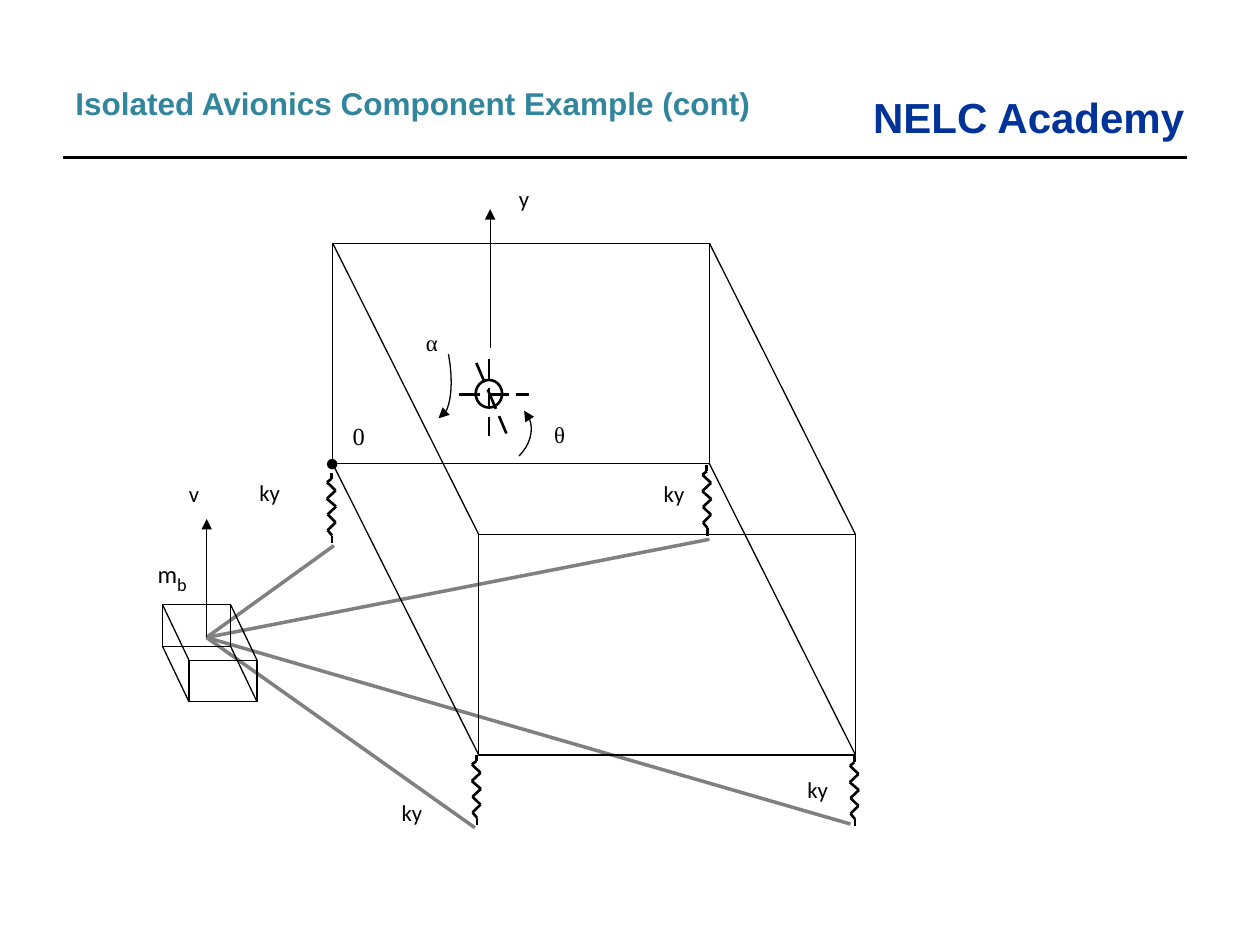
"""Draw a boxed component on four springs, tied to a small mass."""
from dataclasses import dataclass
from typing import NamedTuple

from lxml import etree
from pptx import Presentation
from pptx.dml.color import RGBColor
from pptx.enum.dml import MSO_LINE
from pptx.enum.shapes import MSO_CONNECTOR, MSO_SHAPE
from pptx.enum.text import MSO_ANCHOR, MSO_AUTO_SIZE, PP_ALIGN
from pptx.oxml.ns import qn
from pptx.util import Pt

RECT, OVAL = MSO_SHAPE.RECTANGLE, MSO_SHAPE.OVAL
STRAIGHT, DASH = MSO_CONNECTOR.STRAIGHT, MSO_LINE.LONG_DASH
LEFT, RIGHT = PP_ALIGN.LEFT, PP_ALIGN.RIGHT
TOP, GROW = MSO_ANCHOR.TOP, MSO_AUTO_SIZE.SHAPE_TO_FIT_TEXT


@dataclass(frozen=True)
class Theme:
    ink: RGBColor = RGBColor(0, 0, 0)
    paper: RGBColor = RGBColor(255, 255, 255)
    rod: RGBColor = RGBColor(0x80, 0x80, 0x80)
    title: RGBColor = RGBColor(0x31, 0x85, 0x9C)
    brand: RGBColor = RGBColor(0x00, 0x33, 0x99)
    head: str = "Arial"
    sans: str = "Calibri"
    serif: str = "Times New Roman"
    brand_size: float = 24
    title_size: float = 18
    sub_size: float = 18
    mass_size: float = 14
    label_size: float = 13
    thin: float = 0.75
    bold: float = 1.5
    rod_width: float = 2
    rule: float = 2.25


class Point(NamedTuple):
    x: float
    y: float


class Area(NamedTuple):
    left: float
    top: float
    width: float
    height: float

    def corners(self) -> list[Point]:
        right, base = self.left + self.width, self.top + self.height
        return [Point(x, y) for x in (self.left, right) for y in (self.top, base)]


class Label(NamedTuple):
    text: str
    area: Area
    font: str
    size: float
    align: int = LEFT


class Box(NamedTuple):
    back: Area
    depth: Point


class Line(NamedTuple):
    start: Point
    end: Point


THEME = Theme()
SANS, SERIF = THEME.sans, THEME.serif
SMALL, MID = THEME.label_size, THEME.mass_size

LABELS = [
    Label("ky", Area(454.3, 439.9, 38.9, 23.8), SANS, SMALL),
    Label("ky", Area(372.2, 270.7, 39.6, 26.6), SANS, SMALL),
    Label("ky", Area(222.5, 452.9, 38.9, 27.4), SANS, SMALL),
    Label("ky", Area(141.1, 270, 34.6, 22.3), SANS, SMALL),
    Label("v", Area(100.8, 270.7, 20.2, 22.3), SANS, SMALL),
    Label("y", Area(289.4, 102.2, 20.2, 22.3), SANS, SMALL),
    Label("α", Area(236.2, 184.3, 18, 20.2), SERIF, SMALL),
    Label("θ", Area(309.6, 236.9, 18, 20.2), SERIF, SMALL),
    Label("0", Area(194.4, 236.9, 22.3, 23), SERIF, MID),
    Label("m", Area(72, 311.8, 41.8, 29.5), SANS, MID, RIGHT),
]
BOXES = [
    Box(Area(190.1, 139, 215.3, 126), Point(83.5, 166.5)),
    Box(Area(92.9, 345.6, 38.9, 23.8), Point(15.1, 31.7)),
]
MARKS = [
    Line(Point(279.4, 205.2), Point(279.4, 249.1)),
    Line(Point(262.1, 225.3), Point(302.4, 225.3)),
    Line(Point(272.2, 207.4), Point(289.4, 247.7)),
]
AXES = [
    Line(Point(118.1, 364.3), Point(118.1, 296.6)),
    Line(Point(280.1, 198.7), Point(280.1, 119.5)),
]
HUB = Point(118, 364.3)
FEET = [Point(190.8, 311.8), Point(405.4, 308.2), Point(486, 470.9), Point(271.4, 473)]
SPRINGS = [Point(488.2, 432), Point(272.2, 431.3), Point(189.4, 270), Point(403.9, 265.7)]
ZIGZAG = [
    Point(0, 0), Point(0, 3.6), Point(-2.5, 5.6), Point(2.4, 10.3), Point(-2.6, 15),
    Point(2.6, 19.5), Point(-2.2, 24), Point(2.4, 28.5), Point(-2.2, 33),
    Point(0.4, 36), Point(0.4, 40.3),
]
TURNS = [
    [Point(256.3, 202.3), Point(259.9, 221.8), Point(257, 237.6), Point(250.6, 239)],
    [Point(296.6, 260.6), Point(304.6, 252.7), Point(306, 241.2), Point(299.5, 234.7)],
]


def style(item, color: RGBColor, width: float) -> None:
    item.line.color.rgb = color
    item.line.width = Pt(width)


def arrow(item) -> None:
    etree.SubElement(item.line._get_or_add_ln(), qn("a:tailEnd"), type="triangle")


def stroke(shapes, start: Point, end: Point, width: float = THEME.thin,
           color: RGBColor = THEME.ink):
    item = shapes.add_connector(STRAIGHT, *map(Pt, (*start, *end)))
    style(item, color, width)
    etree.SubElement(item._element.spPr, qn("a:effectLst"))
    return item


def outline(shapes, kind: int, area: Area, width: float = THEME.thin,
            fill: RGBColor | None = None) -> None:
    item = shapes.add_shape(kind, *map(Pt, area))
    item.shadow.inherit = False
    style(item, THEME.ink, width)
    if fill is None:
        item.fill.background()
    else:
        item.fill.solid()
        item.fill.fore_color.rgb = fill


def dress(run, font: str, size: float, color: RGBColor, bold: bool = False) -> None:
    run.font.name, run.font.size, run.font.bold = font, Pt(size), bold
    run.font.color.rgb = color


def write(shapes, label: Label):
    item = shapes.add_shape(RECT, *map(Pt, label.area))
    item.shadow.inherit = False
    item.fill.solid()
    item.fill.fore_color.rgb = THEME.paper
    item.line.fill.background()
    frame = item.text_frame
    frame.text, frame.vertical_anchor = label.text, TOP
    para = frame.paragraphs[0]
    para.alignment, para.space_after = label.align, Pt(10)
    dress(para.runs[0], label.font, label.size, THEME.ink)
    return para


def banner(shapes, text: str, area: Area, size: float, color: RGBColor,
           wrap: bool, gap: float) -> None:
    frame = shapes.add_textbox(*map(Pt, area)).text_frame
    frame.text, frame.word_wrap, frame.auto_size = text, wrap, GROW
    para = frame.paragraphs[0]
    para.space_before = para.space_after = Pt(gap)
    dress(para.runs[0], THEME.head, size, color, True)


def crate(shapes, box: Box) -> None:
    back, (dx, dy) = box
    front = back._replace(left=back.left + dx, top=back.top + dy)
    for face in (back, front):
        outline(shapes, RECT, face)
    for start, end in zip(back.corners(), front.corners()):
        stroke(shapes, start, end)


def spring(shapes, base: Point) -> None:
    path = [Point(base.x + x, base.y + y) for x, y in ZIGZAG]
    for start, end in zip(path, path[1:]):
        stroke(shapes, start, end, THEME.bold)


def turn(shapes, knots: list[Point], steps: int = 10) -> None:
    path = []
    for step in range(steps + 1):
        t = step / steps
        u = 1 - t
        parts = (u**3, 3 * u * u * t, 3 * u * t * t, t**3)
        path.append(tuple(Pt(sum(p * k for p, k in zip(parts, axis)))
                          for axis in zip(*knots)))
    maker = shapes.build_freeform(*path[0])
    maker.add_line_segments(path[1:], close=False)
    item = maker.convert_to_shape()
    item.shadow.inherit = False
    item.fill.background()
    style(item, THEME.ink, THEME.thin)
    arrow(item)


def main() -> None:
    deck = Presentation()
    deck.slide_width, deck.slide_height = Pt(720), Pt(540)
    shapes = deck.slides.add_slide(deck.slide_layouts[6]).shapes
    banner(shapes, "NELC Academy", Area(491.8, 49, 195.8, 36),
           THEME.brand_size, THEME.brand, False, 0)
    stroke(shapes, Point(36, 90), Point(678.2, 90), THEME.rule)
    banner(shapes, "Isolated Avionics Component Example (cont)",
           Area(36, 44.6, 414, 28.8), THEME.title_size, THEME.title, True, 2)
    for label in LABELS:
        para = write(shapes, label)
    sub = para.add_run()
    sub.text = "b"
    dress(sub, SANS, THEME.sub_size, THEME.ink)
    sub._r.get_or_add_rPr().set("baseline", "-25000")
    for foot in FEET:
        stroke(shapes, foot, HUB, THEME.rod_width, THEME.rod)
    for box in BOXES:
        crate(shapes, box)
    outline(shapes, OVAL, Area(271.8, 217.1, 15.1, 15.8), THEME.bold, THEME.paper)
    for mark in MARKS:
        stroke(shapes, *mark, THEME.bold).line.dash_style = DASH
    outline(shapes, OVAL, Area(187.2, 262.6, 5.2, 5.2), fill=THEME.ink)
    for base in SPRINGS:
        spring(shapes, base)
    for axis in AXES:
        arrow(stroke(shapes, *axis))
    for knots in TURNS:
        turn(shapes, knots)
    deck.save("out.pptx")


if __name__ == "__main__":
    main()
